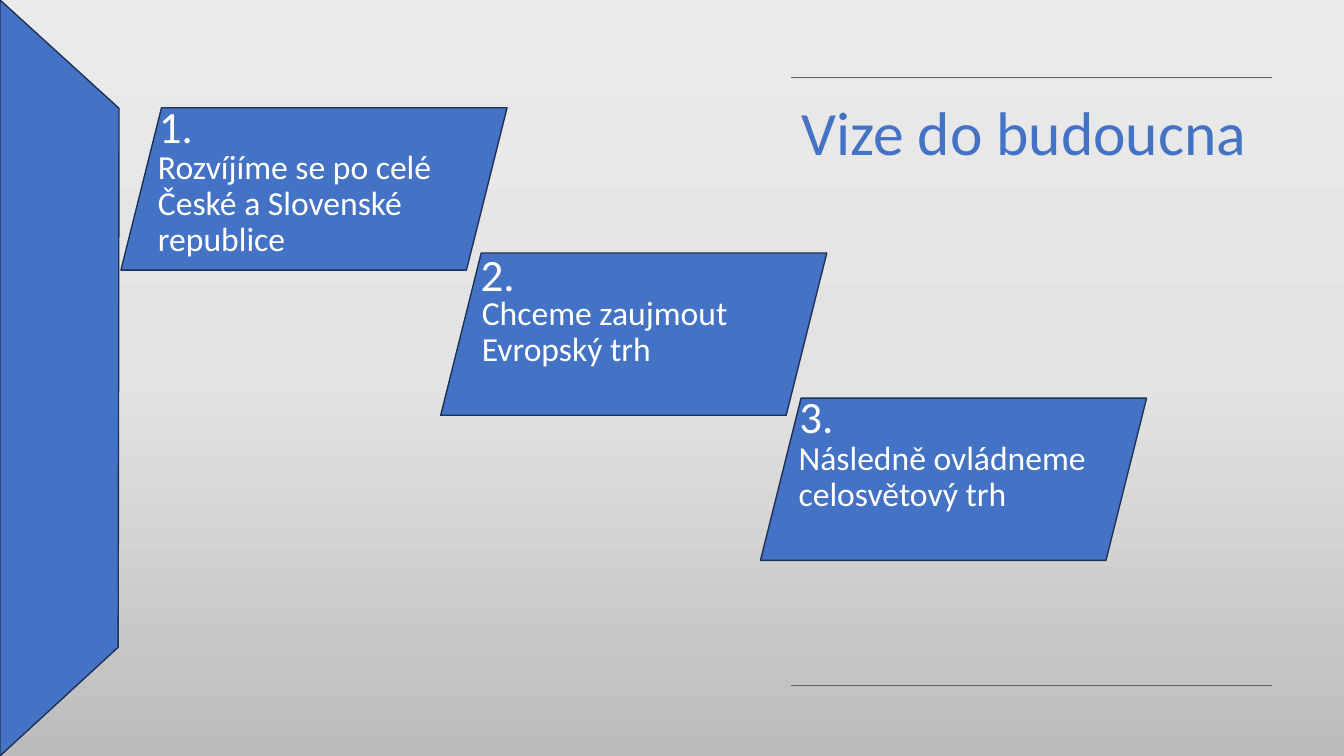
from lxml import etree
from pptx import Presentation
from pptx.dml.color import RGBColor
from pptx.enum.shapes import MSO_CONNECTOR, MSO_SHAPE
from pptx.enum.text import MSO_ANCHOR, MSO_AUTO_SIZE, PP_ALIGN
from pptx.oxml.ns import qn
from pptx.util import Pt

STRAIGHT = MSO_CONNECTOR.STRAIGHT
PARALLELOGRAM = MSO_SHAPE.PARALLELOGRAM
TOP = MSO_ANCHOR.TOP
NO_AUTOFIT = MSO_AUTO_SIZE.NONE
LEFT, CENTER = PP_ALIGN.LEFT, PP_ALIGN.CENTER

BLUE = RGBColor(0x44, 0x72, 0xC4)
NAVY = RGBColor(0x1E, 0x32, 0x56)
WHITE = RGBColor(0xFF, 0xFF, 0xFF)
RULE_GREY = RGBColor(0x60, 0x60, 0x60)
BACKGROUND_STOPS = [
    (0, RGBColor(0xEB, 0xEA, 0xEA)),
    (50, RGBColor(0xE4, 0xE3, 0xE3)),
    (100, RGBColor(0xBD, 0xBC, 0xBC)),
]
FONT = "Calibri"

TITLE = "Vize do budoucna"
# number, text, number offset from the step's corner, text offset from it
STEPS = [
    ("1.", "Rozvíjíme se po celé České a Slovenské republice", (19.5, -5.8), (19.4, 26.6)),
    ("2.", "Chceme zaujmout Evropský trh", (20.9, -3.6), (22.3, 27.4)),
    ("3.", "Následně ovládneme celosvětový trh", (20.2, -5.8), (20.2, 27.4)),
]

SLIDE_W, SLIDE_H = 960, 540
SIDE_PANEL = [(0, 0), (85, 77.4), (84.4, 462.4), (0, SLIDE_H)]
RULE_LEFT, RULE_RIGHT = 565, 908.5
RULE_TOPS = [55.2, 489.6]
TITLE_BOX = (565.2, 63.4, 334.8, 60.5)
FIRST_STEP = (86.4, 77)
STEP_SHIFT = (228.4, 103.7)
STEP_SIZE = (275.8, 115.9)
NUMBER_SIZE = (39.6, 44.6)
TEXT_SIZE = (230.4, 89.3)


def points(*values):
    return [Pt(value) for value in values]


def write(holder, text, size, color, align=LEFT, spacing=1.0, before=0):
    frame = holder.text_frame
    frame.word_wrap = True
    frame.auto_size = NO_AUTOFIT
    frame.vertical_anchor = TOP
    paragraph = frame.paragraphs[0]
    paragraph.alignment = align
    paragraph.line_spacing = spacing
    paragraph.space_before = Pt(before)
    run = paragraph.add_run()
    run.text = text
    run.font.name = FONT
    run.font.size = Pt(size)
    run.font.color.rgb = color


def paint(shape):
    shape.shadow.inherit = False
    shape.fill.solid()
    shape.fill.fore_color.rgb = BLUE
    shape.line.color.rgb = NAVY
    shape.line.width = Pt(1)


def paint_background(slide):
    fill = slide.background.fill
    fill.gradient()
    fill.gradient_angle = 270
    stops = next(slide.element.iter(qn("a:gsLst")))
    for stop in list(stops):
        stops.remove(stop)
    for percent, color in BACKGROUND_STOPS:
        stop = etree.SubElement(stops, qn("a:gs"), pos=str(percent * 1000))
        etree.SubElement(stop, qn("a:srgbClr"), val=str(color))


def add_side_panel(slide):
    corners = [points(*corner) for corner in SIDE_PANEL]
    builder = slide.shapes.build_freeform(*corners[0])
    builder.add_line_segments(corners[1:], close=True)
    paint(builder.convert_to_shape())


def add_rule(slide, top):
    rule = slide.shapes.add_connector(
        STRAIGHT, *points(RULE_LEFT, top, RULE_RIGHT, top))
    rule.line.color.rgb = RULE_GREY
    rule.line.width = Pt(0.5)
    etree.SubElement(rule.element.spPr, qn("a:effectLst"))


def add_step(slide, index, number, text, number_offset, text_offset):
    left, top = (start + index * shift for start, shift in zip(FIRST_STEP, STEP_SHIFT))
    parts = slide.shapes.add_group_shape().shapes
    paint(parts.add_shape(PARALLELOGRAM, *points(left, top, *STEP_SIZE)))
    labels = [
        (text, text_offset, TEXT_SIZE, 24, LEFT),
        (number, number_offset, NUMBER_SIZE, 32, CENTER),
    ]
    for words, (dx, dy), box_size, font_size, align in labels:
        label = parts.add_textbox(*points(left + dx, top + dy, *box_size))
        write(label, words, font_size, WHITE, align=align, spacing=0.9, before=10)


def main():
    deck = Presentation()
    deck.slide_width, deck.slide_height = points(SLIDE_W, SLIDE_H)
    slide = deck.slides.add_slide(deck.slide_layouts[5])
    paint_background(slide)
    add_side_panel(slide)
    for top in RULE_TOPS:
        add_rule(slide, top)
    title = slide.shapes.title
    title.left, title.top, title.width, title.height = points(*TITLE_BOX)
    write(title, TITLE, 44, BLUE)
    for index, step in enumerate(STEPS):
        add_step(slide, index, *step)
    deck.save("out.pptx")


if __name__ == "__main__":
    main()
